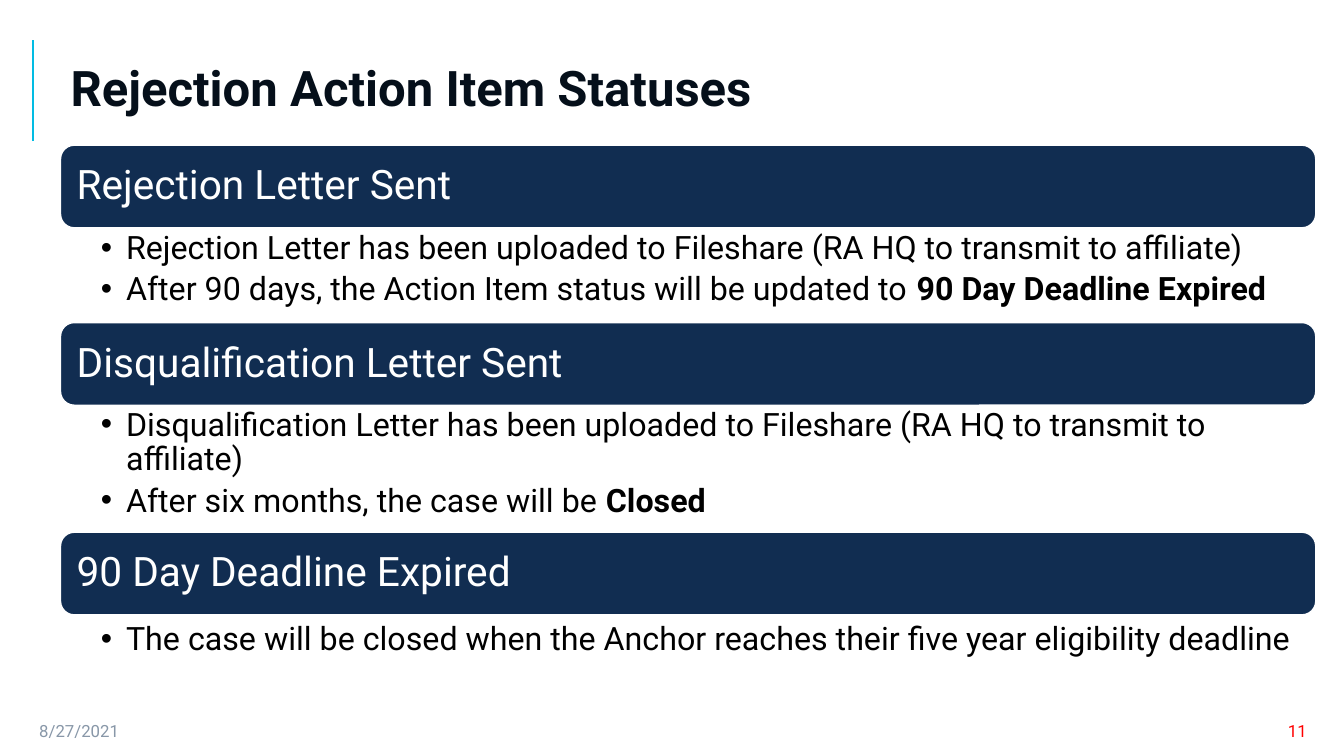
from lxml import etree
from pptx import Presentation, util as u
from pptx.dml.color import RGBColor
from pptx.enum import shapes, text
from pptx.oxml.ns import qn

SLIDE_W, SLIDE_H = 13.33, 7.5
LEFT, WIDTH = 0.6, 12.45
BAR_H = 0.82
FONT = "Roboto"
NAVY, INK, CYAN = "112D51", "050F1A", "02BCE3"
WHITE, BLACK, GREY, RED = "FFFFFF", "000000", "8897A8", "FF0000"

# Heading, bar top, bullet top, bullet height, bullets as (plain, bold) pairs
STATUSES = [
    ("Rejection Letter Sent", 1.44, 2.26, 0.94, [
        ("Rejection Letter has been uploaded to Fileshare (RA HQ to transmit to affiliate)", ""),
        ("After 90 days, the Action Item status will be updated to ", "90 Day Deadline Expired")]),
    ("Disqualification Letter Sent", 3.2, 4.01, 1.31, [
        ("Disqualification Letter has been uploaded to Fileshare (RA HQ to transmit to affiliate)", ""),
        ("After six months, the case will be ", "Closed")]),
    ("90 Day Deadline Expired", 5.28, 6.14, 0.53, [
        ("The case will be closed when the Anchor reaches their five year eligibility deadline", "")]),
]


def color(hex_string):
    return RGBColor.from_string(hex_string)


def inches(*lengths):
    return [u.Inches(length) for length in lengths]


def style(paragraph, size, hex_string, bold=False):
    for run in paragraph.runs:
        run.font.name, run.font.size, run.font.bold = FONT, u.Pt(size), bold
        run.font.color.rgb = color(hex_string)


def set_frame(frame, anchor, margins=(0.1, 0.05, 0.1, 0.05)):
    frame.word_wrap = True
    frame.auto_size = text.MSO_AUTO_SIZE.NONE
    frame.vertical_anchor = anchor
    (frame.margin_left, frame.margin_top,
     frame.margin_right, frame.margin_bottom) = inches(*margins)


def add_bullet(paragraph):
    props = paragraph._p.get_or_add_pPr()
    props.set("marL", str(u.Inches(0.25)))
    props.set("indent", str(u.Inches(-0.25)))
    etree.SubElement(props, qn("a:buFont")).set("typeface", "Arial")
    etree.SubElement(props, qn("a:buChar")).set("char", "•")


def header(slide, left, top, width, height):
    title = slide.shapes.title
    title.left, title.top, title.width, title.height = inches(left, top, width, height)
    title.text_frame.text = "Rejection Action Item Statuses"
    set_frame(title.text_frame, text.MSO_ANCHOR.MIDDLE)
    heading = title.text_frame.paragraphs[0]
    heading.alignment = text.PP_ALIGN.LEFT
    heading.line_spacing = 0.9
    style(heading, 35, INK, True)

    # Accent rule beside the title
    rule_x = left - 0.27
    rule = slide.shapes.add_connector(
        shapes.MSO_CONNECTOR.STRAIGHT, *inches(rule_x, top + height, rule_x, top))
    rule.line.color.rgb = color(CYAN)
    rule.line.width = u.Pt(1.5)
    etree.SubElement(rule._element.spPr, qn("a:effectLst"))


def status_bar(slide, left, top, width, height, label):
    bar = slide.shapes.add_shape(
        shapes.MSO_SHAPE.ROUNDED_RECTANGLE, *inches(left, top, width, height))
    bar.shadow.inherit = False
    bar.fill.solid()
    bar.fill.fore_color.rgb = color(NAVY)
    bar.line.color.rgb = color(WHITE)
    bar.line.width = u.Pt(1)
    bar.text_frame.text = label
    # The rounded corners already inset the text by 0.04
    set_frame(bar.text_frame, text.MSO_ANCHOR.MIDDLE, (0.12, 0.12, 0.12, 0.12))
    heading = bar.text_frame.paragraphs[0]
    heading.alignment = text.PP_ALIGN.LEFT
    heading.line_spacing = 0.9
    style(heading, 29, WHITE)


def status_bullets(slide, left, top, width, height, bullets):
    frame = slide.shapes.add_textbox(*inches(left, top, width, height)).text_frame
    set_frame(frame, text.MSO_ANCHOR.TOP, (0.4, 0.04, 0.23, 0.04))
    for index, (plain, strong) in enumerate(bullets):
        bullet = frame.add_paragraph() if index else frame.paragraphs[0]
        bullet.text = plain
        bullet.line_spacing = 0.9
        bullet.space_after = u.Pt(4.6)
        add_bullet(bullet)
        if strong:
            bullet.add_run().text = strong
        style(bullet, 23, BLACK)
        if strong:
            bullet.runs[-1].font.bold = True


def footer_item(slide, left, top, width, height, label, hex_string, align):
    frame = slide.shapes.add_textbox(*inches(left, top, width, height)).text_frame
    frame.text = label
    set_frame(frame, text.MSO_ANCHOR.MIDDLE)
    frame.paragraphs[0].alignment = align
    style(frame.paragraphs[0], 12, hex_string)


def main():
    deck = Presentation()
    deck.slide_width, deck.slide_height = inches(SLIDE_W, SLIDE_H)
    slide = deck.slides.add_slide(deck.slide_layouts[5])

    header(slide, LEFT, 0.4, WIDTH, 1)
    for label, bar_top, bullets_top, bullets_h, bullets in STATUSES:
        status_bar(slide, LEFT, bar_top, WIDTH, BAR_H, label)
        status_bullets(slide, LEFT, bullets_top, WIDTH, bullets_h, bullets)

    # Date and slide number
    footer_item(slide, 0.29, 7.1, 3.29, 0.3, "8/27/2021", GREY, text.PP_ALIGN.LEFT)
    footer_item(slide, 9.68, 7.1, 3.38, 0.3, "11", RED, text.PP_ALIGN.RIGHT)
    deck.save("out.pptx")


if __name__ == "__main__":
    main()
